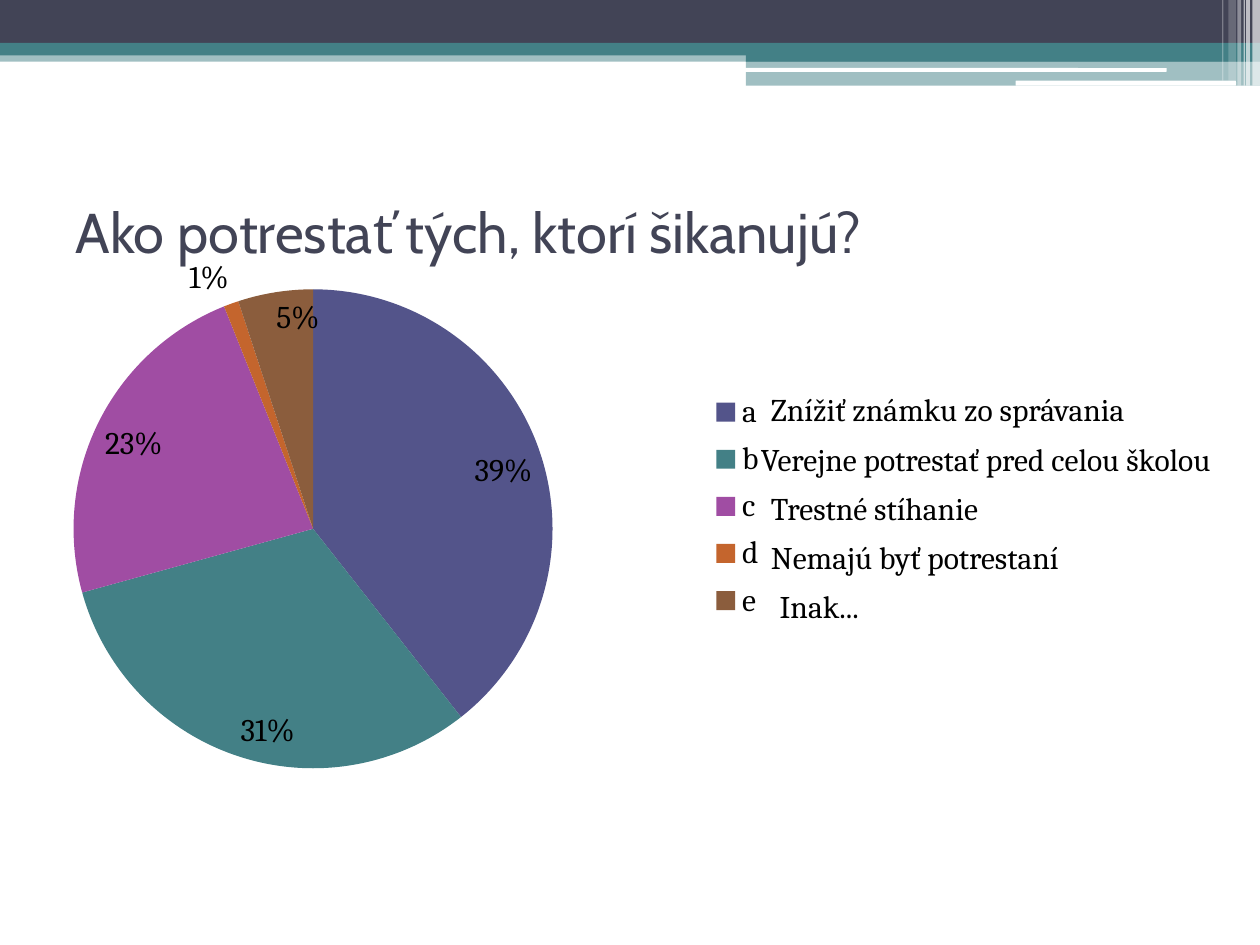
import pptx
import pptx.chart.data
import pptx.dml.color
import pptx.enum.chart
import pptx.enum.shapes
import pptx.enum.text
import pptx.oxml
import pptx.oxml.ns
import pptx.util

COLUMNS, ROWS = 100, 75
INK, TEAL, WHITE, BLACK = "424456", "438086", "FFFFFF", "000000"
HEADING_FONT, BODY_FONT = "Cabin", "Cambria"


def color(code):
    return pptx.dml.color.RGBColor.from_string(code)


class SlideBuilder:
    def __init__(self, deck):
        self.cell_width = deck.slide_width / COLUMNS
        self.cell_height = deck.slide_height / ROWS
        self.slide = deck.slides.add_slide(deck.slide_layouts[5])

    def area(self, left, top, width, height):
        return (round(left * self.cell_width), round(top * self.cell_height),
                round(width * self.cell_width), round(height * self.cell_height))

    def style(self, font, size, name=BODY_FONT, code=BLACK):
        font.size = pptx.util.Pt(size)
        font.name = name
        font.color.rgb = color(code)

    def band(self, place, code, opacity=100, rounded=False):
        kinds = pptx.enum.shapes.MSO_SHAPE
        kind = kinds.ROUNDED_RECTANGLE if rounded else kinds.RECTANGLE
        band = self.slide.shapes.add_shape(kind, *self.area(*place))
        band.shadow.inherit = False
        band.line.fill.background()
        band.fill.solid()
        band.fill.fore_color.rgb = color(code)
        if opacity < 100:
            tint = band._element.spPr.find(".//" + pptx.oxml.ns.qn("a:srgbClr"))
            alpha = pptx.oxml.parse_xml(
                f'<a:alpha {pptx.oxml.ns.nsdecls("a")} val="{opacity * 1000}"/>')
            tint.append(alpha)

    def title(self, place, wording):
        heading = self.slide.shapes.title
        heading.left, heading.top, heading.width, heading.height = self.area(*place)
        frame = heading.text_frame
        frame.text = wording
        frame.auto_size = pptx.enum.text.MSO_AUTO_SIZE.NONE
        frame.vertical_anchor = pptx.enum.text.MSO_ANCHOR.MIDDLE
        paragraph = frame.paragraphs[0]
        paragraph.alignment = pptx.enum.text.PP_ALIGN.LEFT
        self.style(paragraph.font, 32, HEADING_FONT, INK)
        self.slide.shapes._spTree.append(heading._element)

    def text(self, place, wording):
        frame = self.slide.shapes.add_textbox(*self.area(*place)).text_frame
        frame.word_wrap = False
        frame.auto_size = pptx.enum.text.MSO_AUTO_SIZE.SHAPE_TO_FIT_TEXT
        frame.text = wording
        self.style(frame.paragraphs[0].font, 18)

    def arrange(self, element, left, top, width, height, inner=False):
        for old in element.findall(pptx.oxml.ns.qn("c:layout")):
            element.remove(old)
        target = '<c:layoutTarget val="inner"/>' if inner else ""
        layout = pptx.oxml.parse_xml(
            f'<c:layout {pptx.oxml.ns.nsdecls("c")}><c:manualLayout>{target}'
            '<c:xMode val="edge"/><c:yMode val="edge"/>'
            f'<c:x val="{left}"/><c:y val="{top}"/><c:w val="{width}"/><c:h val="{height}"/>'
            '</c:manualLayout></c:layout>')
        element.insert(0 if inner else 1, layout)

    def pie(self, place, answers, outside):
        shares = pptx.chart.data.CategoryChartData()
        shares.categories = [letter for letter, _, _ in answers]
        shares.add_series("Series 1", [share for _, share, _ in answers])
        chart = self.slide.shapes.add_chart(
            pptx.enum.chart.XL_CHART_TYPE.PIE, *self.area(*place), shares).chart
        self.style(chart.font, 18)
        chart.has_title = False
        chart.has_legend = True
        chart.legend.position = pptx.enum.chart.XL_LEGEND_POSITION.RIGHT
        chart.legend.include_in_layout = False
        self.arrange(chart.legend._element, 0.92, 0.28, 0.08, 0.44)
        plot = chart.plots[0]
        self.arrange(chart._chartSpace.chart.plotArea, 0.17, 0.11, 0.57, 0.86, inner=True)
        plot.vary_by_categories = True
        series = plot.series[0]
        for index, (_, _, code) in enumerate(answers):
            wedge = series.points[index].format
            wedge.fill.solid()
            wedge.fill.fore_color.rgb = color(code)
            wedge.line.fill.background()
        positions = pptx.enum.chart.XL_LABEL_POSITION
        labels = series.data_labels
        labels.show_percentage = True
        labels.show_value = False
        labels.number_format = "0%"
        labels.number_format_is_linked = False
        labels.position = positions.INSIDE_END
        self.style(labels.font, 18)
        small = series.points[outside].data_label
        self.style(small.font, 18)
        small.position = positions.OUTSIDE_END
        label = labels._element.find(pptx.oxml.ns.qn("c:dLbl"))
        label.find(pptx.oxml.ns.qn("c:showVal")).set("val", "0")
        label.find(pptx.oxml.ns.qn("c:showPercent")).set("val", "1")


def main():
    deck = pptx.Presentation()
    deck.slide_width = pptx.util.Inches(10)
    deck.slide_height = pptx.util.Inches(7.5)
    page = SlideBuilder(deck)

    page.band((0, 4, 100, 0.9), TEAL, 50)
    page.band((0, 0, 100, 3.4), INK)
    page.band((0, 3.4, 100, 1), TEAL)
    page.band((59.2, 3.9, 40.8, 1), TEAL)
    page.band((59.2, 4.8, 40.8, 2), TEAL, 50)
    page.band((59.1, 5.4, 33.5, 0.3), WHITE, rounded=True)
    page.band((80.6, 6.4, 17.5, 0.4), WHITE, rounded=True)
    stripes = [(99.4, 0.6, 6.8, 65), (98.9, 0.3, 6.8, 65), (98.7, 0.1, 6.8, 60),
               (98.2, 0.3, 6.8, 40), (97.5, 0.6, 6.4, 20), (97, 0.1, 6.4, 30)]
    for left, width, height, opacity in stripes:
        page.band((left, 0, width, height), WHITE, opacity)

    page.title((5, 12.5, 90, 11.7), "Ako potrestať tých, ktorí šikanujú?")
    answers = [("a", 39, "53548A"), ("b", 31, TEAL), ("c", 23, "A04DA3"),
               ("d", 1, "C4652D"), ("e", 5, "8B5D3D")]
    page.pie((-5.5, 18, 66.7, 44.4), answers, outside=3)

    meanings = [(60.2, 30.3, "Znížiť známku zo správania"),
                (59.4, 38.9, "Verejne potrestať pred celou školou"),
                (60.2, 19.1, "Trestné stíhanie"),
                (60.2, 25.5, "Nemajú byť potrestaní"),
                (60.9, 8.4, "Inak...")]
    for row, (left, width, wording) in enumerate(meanings):
        page.text((left, 30.5 + 3.9 * row, width, 4), wording)

    deck.save("out.pptx")


if __name__ == "__main__":
    main()
